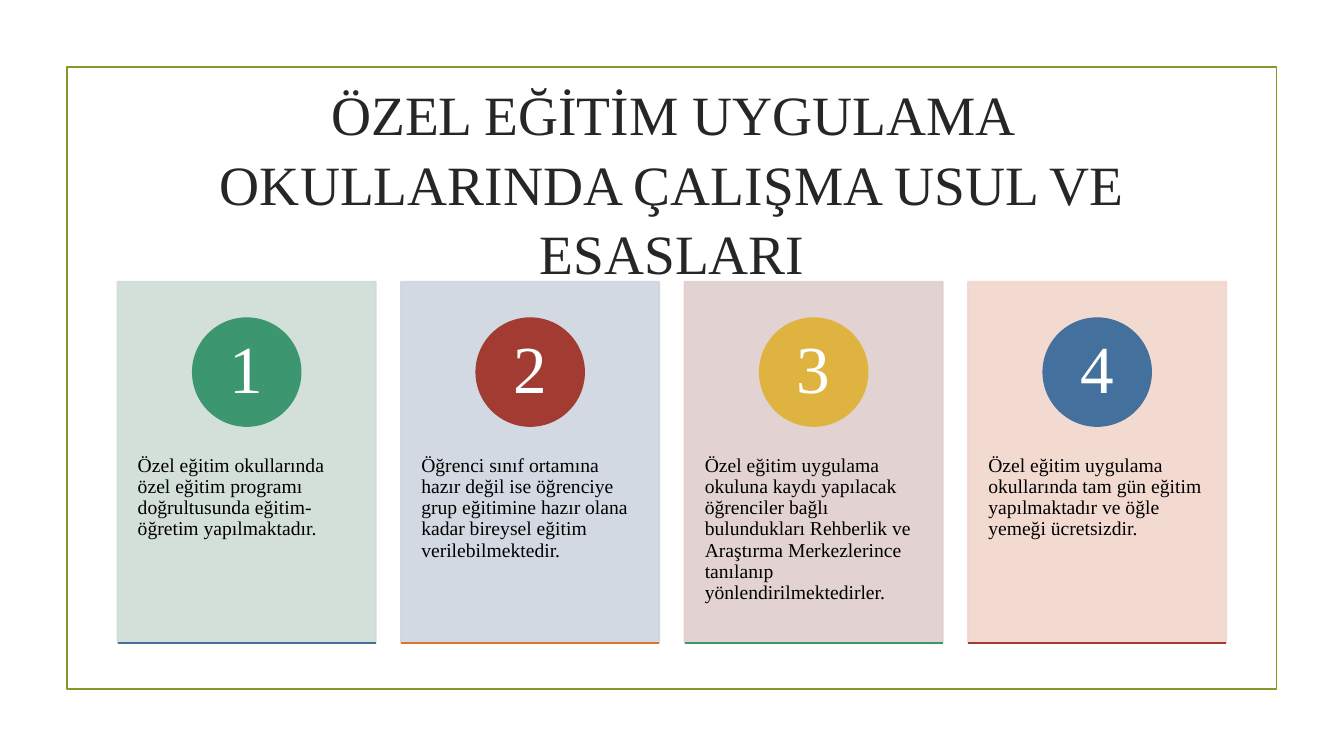
from lxml import etree
from pptx import Presentation
from pptx.dml.color import RGBColor
from pptx.enum.shapes import MSO_CONNECTOR, MSO_SHAPE
from pptx.enum.text import MSO_ANCHOR, MSO_AUTO_SIZE, PP_ALIGN
from pptx.oxml.ns import qn
from pptx.util import Pt

FONT = "Times New Roman"
WHITE = RGBColor(0xFF, 0xFF, 0xFF)
BLACK = RGBColor(0x00, 0x00, 0x00)
TITLE_INK = RGBColor(0x26, 0x26, 0x26)
OLIVE = RGBColor(0x83, 0x99, 0x2A)
GREEN = RGBColor(0x3C, 0x97, 0x70)
RED = RGBColor(0xA2, 0x3C, 0x33)
YELLOW = RGBColor(0xDE, 0xB3, 0x40)
BLUE = RGBColor(0x44, 0x70, 0x9D)
ORANGE = RGBColor(0xD9, 0x78, 0x28)
PALE_GREEN = RGBColor(0xCE, 0xDD, 0xD5)
PALE_BLUE = RGBColor(0xCF, 0xD5, 0xDF)
PALE_RED = RGBColor(0xE0, 0xCE, 0xCE)
PALE_ORANGE = RGBColor(0xF1, 0xD6, 0xCD)

TITLE = "ÖZEL EĞİTİM UYGULAMA OKULLARINDA ÇALIŞMA USUL VE ESASLARI"
# Text, card colour, circle colour, baseline colour
CARDS = [
    ("Özel eğitim okullarında özel eğitim programı doğrultusunda "
     "eğitim-öğretim yapılmaktadır.", PALE_GREEN, GREEN, BLUE),
    ("Öğrenci sınıf ortamına hazır değil ise öğrenciye grup eğitimine "
     "hazır olana kadar bireysel eğitim verilebilmektedir.",
     PALE_BLUE, RED, ORANGE),
    ("Özel eğitim uygulama okuluna kaydı yapılacak öğrenciler bağlı "
     "bulundukları Rehberlik ve Araştırma Merkezlerince tanılanıp "
     "yönlendirilmektedirler.", PALE_RED, YELLOW, GREEN),
    ("Özel eğitim uygulama okullarında tam gün eğitim yapılmaktadır ve "
     "öğle yemeği ücretsizdir.", PALE_ORANGE, BLUE, RED),
]
CARD_W, CARD_H, CARD_PITCH = 184.5, 258, 202.5
CIRCLE = 77


def set_text(sp, text, size, color, align, anchor, insets, spacing=0.9):
    """Fill a shape with one paragraph; insets are left, top, right, bottom."""
    tf = sp.text_frame
    tf.text = text
    tf.word_wrap = True
    tf.auto_size = MSO_AUTO_SIZE.NONE
    tf.vertical_anchor = anchor
    (tf.margin_left, tf.margin_top,
     tf.margin_right, tf.margin_bottom) = map(Pt, insets)
    p = tf.paragraphs[0]
    p.alignment = align
    p.line_spacing = spacing
    font = p.runs[0].font
    font.name, font.size = FONT, Pt(size)
    font.color.rgb = color


def add_filled(slide, kind, x, y, w, h, color):
    sp = slide.shapes.add_shape(kind, Pt(x), Pt(y), Pt(w), Pt(h))
    sp.shadow.inherit = False
    sp.fill.solid()
    sp.fill.fore_color.rgb = color
    sp.line.color.rgb = color
    sp.line.width = Pt(1.25)
    return sp


def make_translucent(sp, percent):
    for clr in sp._element.spPr.iter(qn("a:srgbClr")):
        etree.SubElement(clr, qn("a:alpha")).set("val", str(percent * 1000))


def add_frame(slide, x, y, w, h):
    sp = add_filled(slide, MSO_SHAPE.RECTANGLE, x, y, w, h, OLIVE)
    sp.fill.background()


def add_title(slide, x, y, w, h):
    title = slide.shapes.title
    title.left, title.top, title.width, title.height = map(Pt, (x, y, w, h))
    set_text(title, TITLE, 39.6, TITLE_INK, PP_ALIGN.CENTER,
             MSO_ANCHOR.MIDDLE, (7.2, 3.6, 7.2, 3.6), 1.05)


def add_card(slide, x, y, w, h, number, text, pale, accent, base):
    card = add_filled(slide, MSO_SHAPE.RECTANGLE, x, y, w, h, pale)
    make_translucent(card, 90)
    set_text(card, text, 14, BLACK, PP_ALIGN.LEFT, MSO_ANCHOR.TOP,
             (14.4, 124, 14.4, 26))

    circle = add_filled(slide, MSO_SHAPE.OVAL, x + (w - CIRCLE) / 2, y + 26,
                        CIRCLE, CIRCLE, accent)
    set_text(circle, str(number), 48, WHITE, PP_ALIGN.CENTER,
             MSO_ANCHOR.MIDDLE, (0, 0, 0, 0))

    line = slide.shapes.add_connector(MSO_CONNECTOR.STRAIGHT, Pt(x), Pt(y + h),
                                      Pt(x + w), Pt(y + h))
    line.line.color.rgb = base
    line.line.width = Pt(1.25)
    etree.SubElement(line._element.spPr, qn("a:effectLst"))


def add_cards(slide, x, y):
    for i, card in enumerate(CARDS):
        add_card(slide, x + i * CARD_PITCH, y, CARD_W, CARD_H, i + 1, *card)


def main():
    prs = Presentation()
    prs.slide_width, prs.slide_height = Pt(960), Pt(540)
    slide = prs.slides.add_slide(prs.slide_layouts[5])
    add_frame(slide, 47.8, 48, 864, 444)
    add_title(slide, 102, 78, 756, 103)
    add_cards(slide, 84, 201.3)
    prs.save("out.pptx")


if __name__ == "__main__":
    main()
